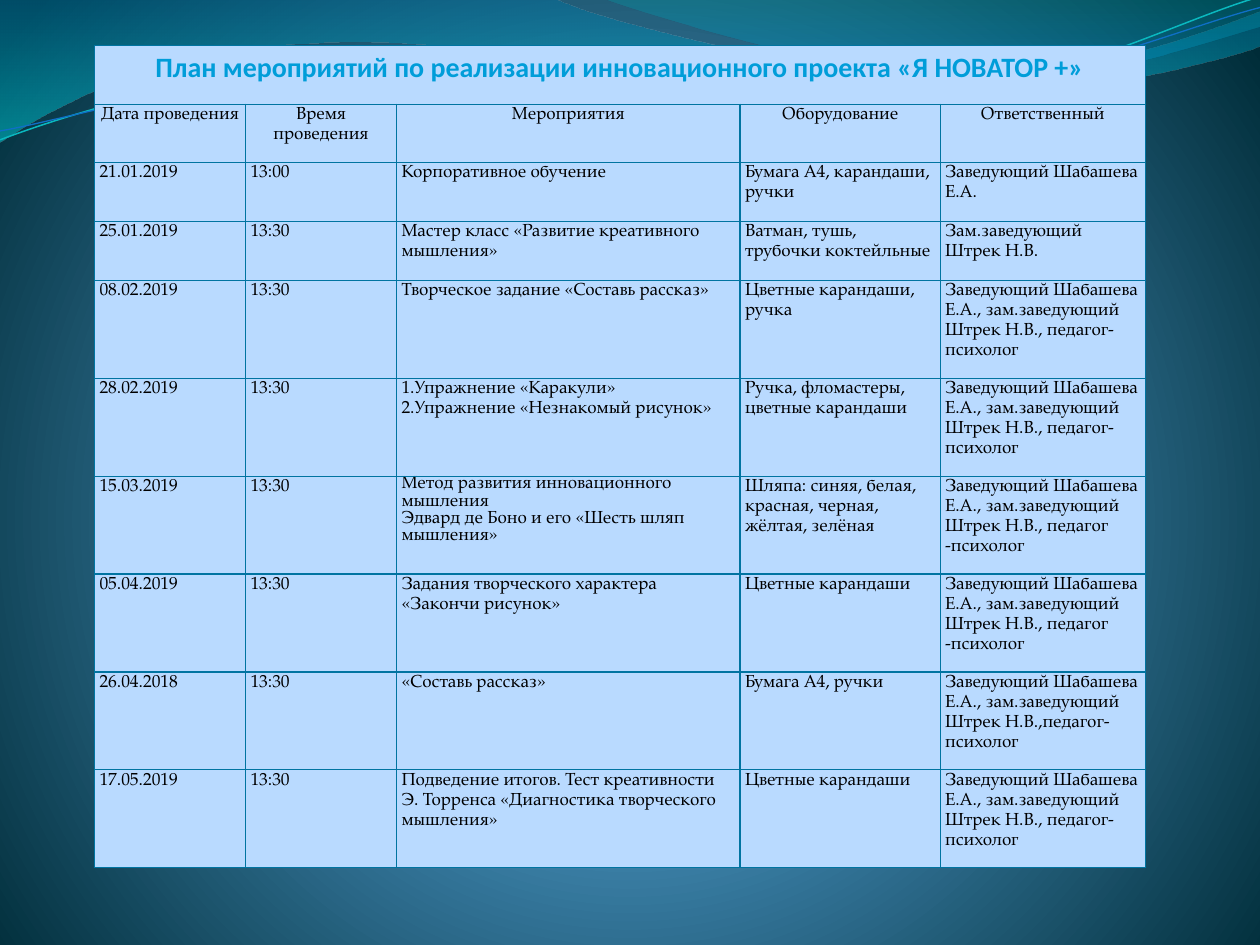
import math
from typing import NamedTuple

from lxml import etree
from pptx import Presentation
from pptx import util as u
from pptx.dml.color import RGBColor
from pptx.enum import text
from pptx.oxml import parse_xml
from pptx.oxml.ns import nsdecls, qn

BLUE = RGBColor(0x00, 0x74, 0xA1)
TITLE_BLUE = RGBColor(0x00, 0x9D, 0xD9)
CELL_BLUE = RGBColor(0xB9, 0xDA, 0xFF)
BLACK = RGBColor(0x00, 0x00, 0x00)
TEAL_LINE = RGBColor(0x0A, 0xB8, 0xBF)
BLUE_LINE = RGBColor(0x0F, 0x6F, 0xC6)
SKY = RGBColor(0x4A, 0xA0, 0xD6)
STEEL = RGBColor(0x4C, 0x98, 0xC7)
NIGHT = RGBColor(0x00, 0x2C, 0x38)
AQUA = RGBColor(0x00, 0xC6, 0xCF)
SEA = RGBColor(0x00, 0xA1, 0xA9)
AZURE = RGBColor(0x00, 0x8B, 0xBF)

BODY_FONT = "TeX Gyre Pagella"
PLAN_WIDTH, PLAN_HEIGHT = 8.34, 6.53
COLUMN_SHARES = (1.2, 1.2, 2.73, 1.59, 1.63)
ROW_SHARES = (3,) * 4 + (5,) * 6
TILT = -2.7


class Stop(NamedTuple):
    position: int
    color: RGBColor
    opacity: int = 100


class Wave(NamedTuple):
    """A start point followed by segments: 2 numbers for a line, 6 for a Bezier curve."""
    start: tuple
    segments: list
    stops: tuple = ()
    line: RGBColor | None = None
    width: float = 0
    tilt: float = 0
    centre: tuple = (0, 0)


class Event(NamedTuple):
    date: str
    time: str
    activity: str
    equipment: str
    responsible: str


WAVES = [
    Wave((0, 0), [(4.4, -0.01), (4.76, 0.17, 6.64, 0.63, 7.58, 0.63),
                  (8.53, 0.63, 9.58, 0.26, 10, 0.09), (10.01, 0.36),
                  (9.83, 0.44, 8.7, 0.76, 7.46, 0.75), (6.22, 0.75, 3.82, 0.28, 2.57, 0.34),
                  (1.29, 0.36, 0.46, 0.83, -0.01, 1.13), (0, 0)],
         stops=(Stop(0, BLUE, 45), Stop(100, AQUA, 55))),
    Wave((4.79, -0.01), [(5.09, 0.11, 6.82, 0.62, 7.69, 0.65),
                         (8.56, 0.69, 9.61, 0.32, 10, 0.21), (10, 0), (4.79, -0.01)],
         stops=(Stop(0, SEA, 30), Stop(80, AZURE, 45))),
    Wave((0, 1.11), [(0.48, 0.93, 1.58, 0.57, 2.77, 0.52), (3.95, 0.47, 5.93, 0.89, 7.13, 0.8),
                     (8.33, 0.71, 9.38, 0.15, 9.98, -0.02)],
         line=TEAL_LINE, width=0.85, tilt=TILT, centre=(4.99, 0.58)),
    Wave((0, 1.04), [(0.47, 0.96, 1.64, 0.61, 2.83, 0.56), (4.03, 0.51, 5.97, 0.84, 7.17, 0.75),
                     (8.36, 0.67, 9.41, 0.21, 10, 0.06)],
         line=BLUE_LINE, width=0.75, tilt=TILT, centre=(5, 0.59)),
]

TITLE = "План мероприятий по реализации инновационного проекта «Я НОВАТОР +»"
HEADER = Event("Дата проведения", "Время проведения", "Мероприятия", "Оборудование", "Ответственный")
HEADS = "Заведующий Шабашева Е.А., зам.заведующий Штрек Н.В.,"
EVENTS = [
    Event("21.01.2019", "13:00", "Корпоративное обучение",
          "Бумага А4, карандаши, ручки", "Заведующий Шабашева Е.А."),
    Event("25.01.2019", "13:30", "Мастер класс «Развитие креативного мышления»",
          "Ватман, тушь, трубочки коктейльные", "Зам.заведующий Штрек Н.В."),
    Event("08.02.2019", "13:30", "Творческое задание «Составь рассказ»",
          "Цветные карандаши, ручка", HEADS + " педагог- психолог"),
    Event("28.02.2019", "13:30", "1.Упражнение «Каракули»\n2.Упражнение «Незнакомый рисунок»",
          "Ручка, фломастеры, цветные карандаши", HEADS + " педагог- психолог"),
    Event("15.03.2019", "13:30",
          "Метод развития инновационного мышления\nЭдвард де Боно и его «Шесть шляп мышления»",
          "Шляпа: синяя, белая, красная, черная, жёлтая, зелёная", HEADS + " педагог -психолог"),
    Event("05.04.2019", "13:30", "Задания творческого характера «Закончи рисунок»",
          "Цветные карандаши", HEADS + " педагог -психолог"),
    Event("26.04.2018", "13:30", "«Составь рассказ»",
          "Бумага А4, ручки", HEADS + "педагог- психолог"),
    Event("17.05.2019", "13:30",
          "Подведение итогов. Тест креативности Э. Торренса «Диагностика творческого мышления»",
          "Цветные карандаши", HEADS + " педагог-психолог"),
]
SINGLE_SPACED = EVENTS[4].activity


def gradient(stops, direction: str):
    marks = "".join(
        f'<a:gs pos="{s.position * 1000}"><a:srgbClr val="{s.color}">'
        f'<a:alpha val="{s.opacity * 1000}"/></a:srgbClr></a:gs>' for s in stops)
    return parse_xml(f'<a:gradFill {nsdecls("a")} rotWithShape="1">'
                     f'<a:gsLst>{marks}</a:gsLst>{direction}</a:gradFill>')


def paint_background(slide) -> None:
    slide.background.fill.solid()
    solid = slide.element.find(f".//{qn('p:bgPr')}/{qn('a:solidFill')}")
    glow = ('<a:path path="circle"><a:fillToRect l="10000" t="110000" '
            'r="10000" b="100000"/></a:path>')
    solid.getparent().replace(solid, gradient((Stop(0, SKY), Stop(25, STEEL), Stop(100, NIGHT)), glow))


def level_points(wave: Wave, numbers: tuple) -> list:
    """The points of a segment in EMU, before the wave is tilted about its centre."""
    angle = math.radians(-wave.tilt)
    cx, cy = wave.centre
    points = []
    for x, y in zip(numbers[::2], numbers[1::2]):
        dx, dy = x - cx, y - cy
        points.append((u.Inches(cx + dx * math.cos(angle) - dy * math.sin(angle)),
                       u.Inches(cy + dx * math.sin(angle) + dy * math.cos(angle))))
    return points


def draw_wave(slide, wave: Wave) -> None:
    segments = [level_points(wave, numbers) for numbers in wave.segments]
    builder = slide.shapes.build_freeform(*level_points(wave, wave.start)[0])
    builder.add_line_segments([points[-1] for points in segments], close=bool(wave.stops))
    shape = builder.convert_to_shape()
    for straight, points in zip(list(shape.element.iter(qn("a:lnTo"))), segments):
        if len(points) == 3:
            curve = etree.Element(qn("a:cubicBezTo"))
            for x, y in points:
                etree.SubElement(curve, qn("a:pt"), x=str(x - shape.left), y=str(y - shape.top))
            straight.getparent().replace(straight, curve)
    shape.rotation = wave.tilt
    shape.shadow.inherit = False
    if wave.stops:
        shape.line.fill.background()
        shape.fill.solid()
        solid = shape.element.spPr.find(qn("a:solidFill"))
        solid.getparent().replace(solid, gradient(wave.stops, '<a:lin ang="5400000" scaled="1"/>'))
    else:
        shape.fill.background()
        shape.line.color.rgb = wave.line
        shape.line.width = u.Pt(wave.width)


def add_borders(cell) -> None:
    properties = cell._tc.get_or_add_tcPr()
    for index, side in enumerate(("a:lnL", "a:lnR", "a:lnT", "a:lnB")):
        border = etree.Element(qn(side), w=str(u.Pt(0.75)))
        fill = etree.SubElement(border, qn("a:solidFill"))
        etree.SubElement(fill, qn("a:srgbClr"), val=str(BLUE))
        properties.insert(index, border)


def write_cell(cell, words: str, centred: bool, size: int = 10, font: str = BODY_FONT,
               color: RGBColor = BLACK, bold: bool = False) -> None:
    cell.text_frame.text = words
    for paragraph in cell.text_frame.paragraphs:
        paragraph.alignment = text.PP_ALIGN.CENTER if centred else text.PP_ALIGN.LEFT
        paragraph.line_spacing = 1.0 if words == SINGLE_SPACED else 1.15
        for run in paragraph.runs:
            run.font.size, run.font.name, run.font.bold = u.Pt(size), font, bold
            run.font.color.rgb = color


def draw_plan(slide) -> None:
    plan = slide.shapes.add_table(
        len(ROW_SHARES), len(COLUMN_SHARES), u.Inches(0.75), u.Inches(0.36),
        u.Inches(PLAN_WIDTH), u.Inches(PLAN_HEIGHT)).table
    plan.first_row = plan.horz_banding = False
    for column, share in zip(plan.columns, COLUMN_SHARES):
        column.width = u.Inches(PLAN_WIDTH * share / sum(COLUMN_SHARES))
    for row, share in zip(plan.rows, ROW_SHARES):
        row.height = u.Inches(PLAN_HEIGHT * share / sum(ROW_SHARES))
    for cell in plan.iter_cells():
        cell.margin_left = cell.margin_right = u.Inches(0.04)
        cell.margin_top = cell.margin_bottom = 0
        cell.fill.solid()
        cell.fill.fore_color.rgb = CELL_BLUE
        add_borders(cell)
    plan.cell(0, 0).merge(plan.cell(0, len(COLUMN_SHARES) - 1))
    write_cell(plan.cell(0, 0), TITLE, True, 16, "Calibri", TITLE_BLUE, True)
    for r, event in enumerate([HEADER, *EVENTS], start=1):
        for c, words in enumerate(event):
            write_cell(plan.cell(r, c), words, centred=event is HEADER)


def main() -> None:
    deck = Presentation()
    deck.slide_width, deck.slide_height = u.Inches(10), u.Inches(7.5)
    slide = deck.slides.add_slide(deck.slide_layouts[6])
    paint_background(slide)
    for wave in WAVES:
        draw_wave(slide, wave)
    draw_plan(slide)
    deck.save("out.pptx")


if __name__ == "__main__":
    main()
